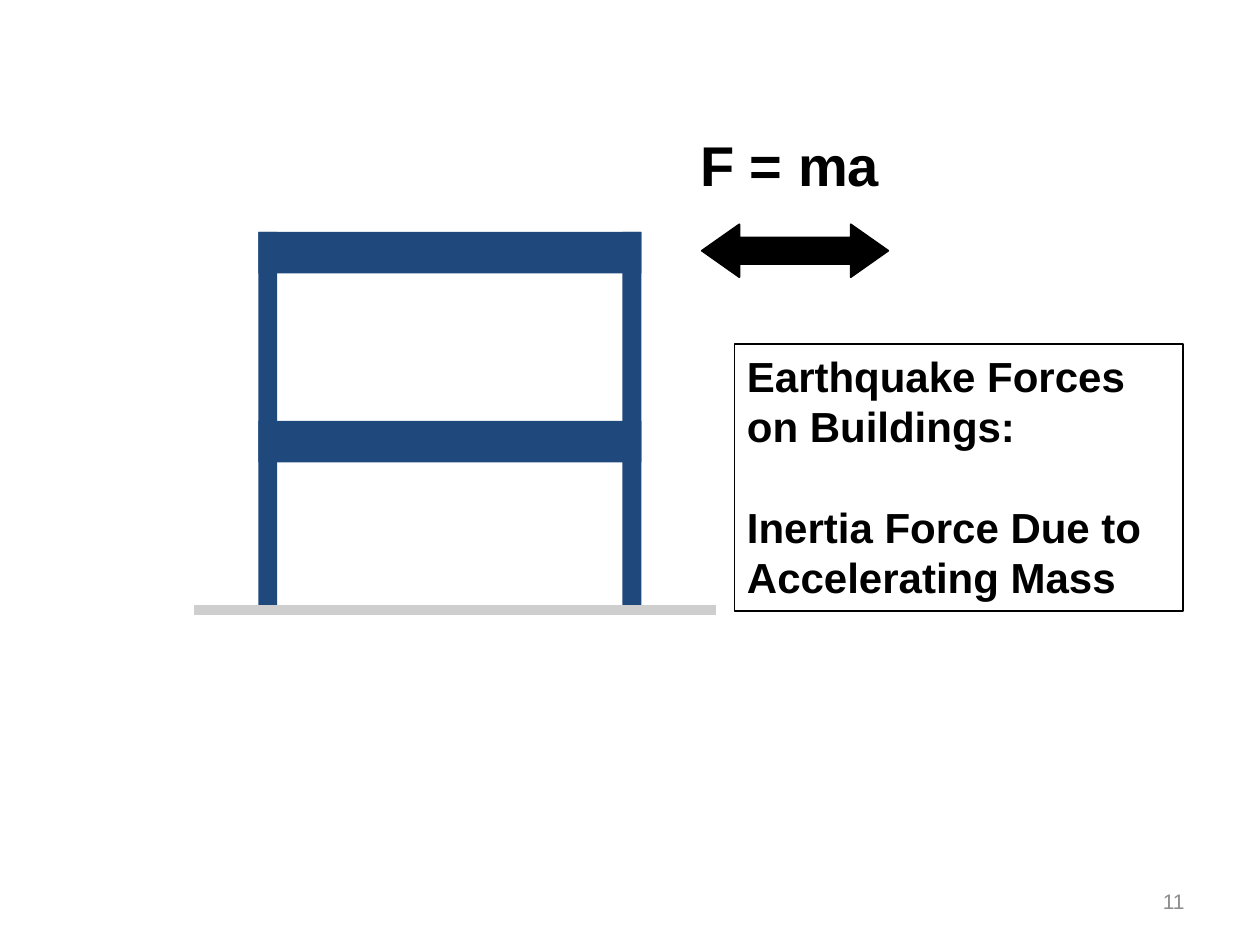
"""Build a slide on the inertia force that an earthquake puts on a two-storey frame."""
from typing import NamedTuple

from lxml.etree import SubElement
from pptx import Presentation
from pptx.dml.color import RGBColor
from pptx.enum.shapes import MSO_CONNECTOR, MSO_SHAPE
from pptx.enum.text import MSO_ANCHOR, PP_ALIGN
from pptx.oxml.ns import qn
from pptx.util import Inches, Pt

NAVY = RGBColor(0x1F, 0x49, 0x7D)
BLACK = RGBColor(0, 0, 0)
GROUND_GRAY = RGBColor(0xCE, 0xCE, 0xCE)
NUMBER_GRAY = RGBColor(0x8C, 0x8C, 0x8C)
FONT = "Arial"


class Box(NamedTuple):
    """Left, top, width and height in inches."""
    left: float
    top: float
    width: float
    height: float

    def lengths(self) -> list[int]:
        """Return the four lengths for python-pptx."""
        return [Inches(value) for value in self]


FRAME = Box(2.05, 1.84, 3.04, 3)
COLUMN_WIDTH = 0.15
BEAM_HEIGHT = 0.33
STOREY_HEIGHT = FRAME.height / 2
GROUND_LEFT, GROUND_RIGHT = 1.54, 5.68


def add_filled(shapes, kind: MSO_SHAPE, box: Box, color: RGBColor):
    """Add a preset shape with a solid fill and no outline."""
    shape = shapes.add_shape(kind, *box.lengths())
    shape.shadow.inherit = False
    shape.fill.solid()
    shape.fill.fore_color.rgb = color
    shape.line.fill.background()
    return shape


def add_text(slide, text: str, box: Box, *, size: float, color: RGBColor = BLACK,
             bold: bool = True, align: PP_ALIGN = PP_ALIGN.LEFT,
             anchor: MSO_ANCHOR = MSO_ANCHOR.TOP, gap: float = 0):
    """Add a text box with one paragraph for each line of the text."""
    shape = slide.shapes.add_textbox(*box.lengths())
    frame = shape.text_frame
    frame.word_wrap = True
    frame.vertical_anchor = anchor
    frame.text = text
    for index, paragraph in enumerate(frame.paragraphs):
        paragraph.alignment = align
        paragraph.space_before = Pt(gap if index else 0)
        paragraph.font.name = FONT
        paragraph.font.size = Pt(size)
        paragraph.font.bold = bold
        paragraph.font.color.rgb = color
    return shape


def add_building(slide) -> None:
    """Draw the columns and floor beams as a group."""
    group = slide.shapes.add_group_shape()
    left, top, width, height = FRAME
    columns = [Box(x, top, COLUMN_WIDTH, height)
               for x in (left, left + width - COLUMN_WIDTH)]
    beams = [Box(left, top + floor * STOREY_HEIGHT, width, BEAM_HEIGHT)
             for floor in range(2)]
    for member in columns + beams:
        add_filled(group.shapes, MSO_SHAPE.RECTANGLE, member, NAVY)


def add_ground(slide) -> None:
    """Draw the ground line under the columns."""
    level = Inches(FRAME.top + FRAME.height)
    ground = slide.shapes.add_connector(
        MSO_CONNECTOR.STRAIGHT, Inches(GROUND_LEFT), level, Inches(GROUND_RIGHT), level)
    ground.line.color.rgb = GROUND_GRAY
    ground.line.width = Pt(6)
    SubElement(ground._element.spPr, qn("a:effectLst"))


def main() -> None:
    """Build and save the slide."""
    presentation = Presentation()
    presentation.slide_width, presentation.slide_height = Inches(10), Inches(7.5)
    slide = presentation.slides.add_slide(presentation.slide_layouts[6])

    add_building(slide)
    add_ground(slide)
    add_text(slide, "11", Box(7.17, 6.95, 2.33, 0.4), size=12, color=NUMBER_GRAY,
             bold=False, align=PP_ALIGN.RIGHT, anchor=MSO_ANCHOR.MIDDLE)

    arrow = add_filled(slide.shapes, MSO_SHAPE.LEFT_RIGHT_ARROW,
                       Box(5.57, 1.78, 1.48, 0.42), BLACK)
    arrow.adjustments[0], arrow.adjustments[1] = 0.5, 0.71
    arrow.line.color.rgb = BLACK
    arrow.line.width = Pt(1)
    add_text(slide, "F = ma", Box(5.46, 0.99, 2, 0.63), size=32)

    message = add_text(
        slide, "Earthquake Forces on Buildings:\nInertia Force Due to Accelerating Mass",
        Box(5.83, 2.73, 3.56, 2.12), size=24, gap=28.8)
    message.line.color.rgb = BLACK
    message.line.width = Pt(1)

    presentation.save("out.pptx")


if __name__ == "__main__":
    main()
